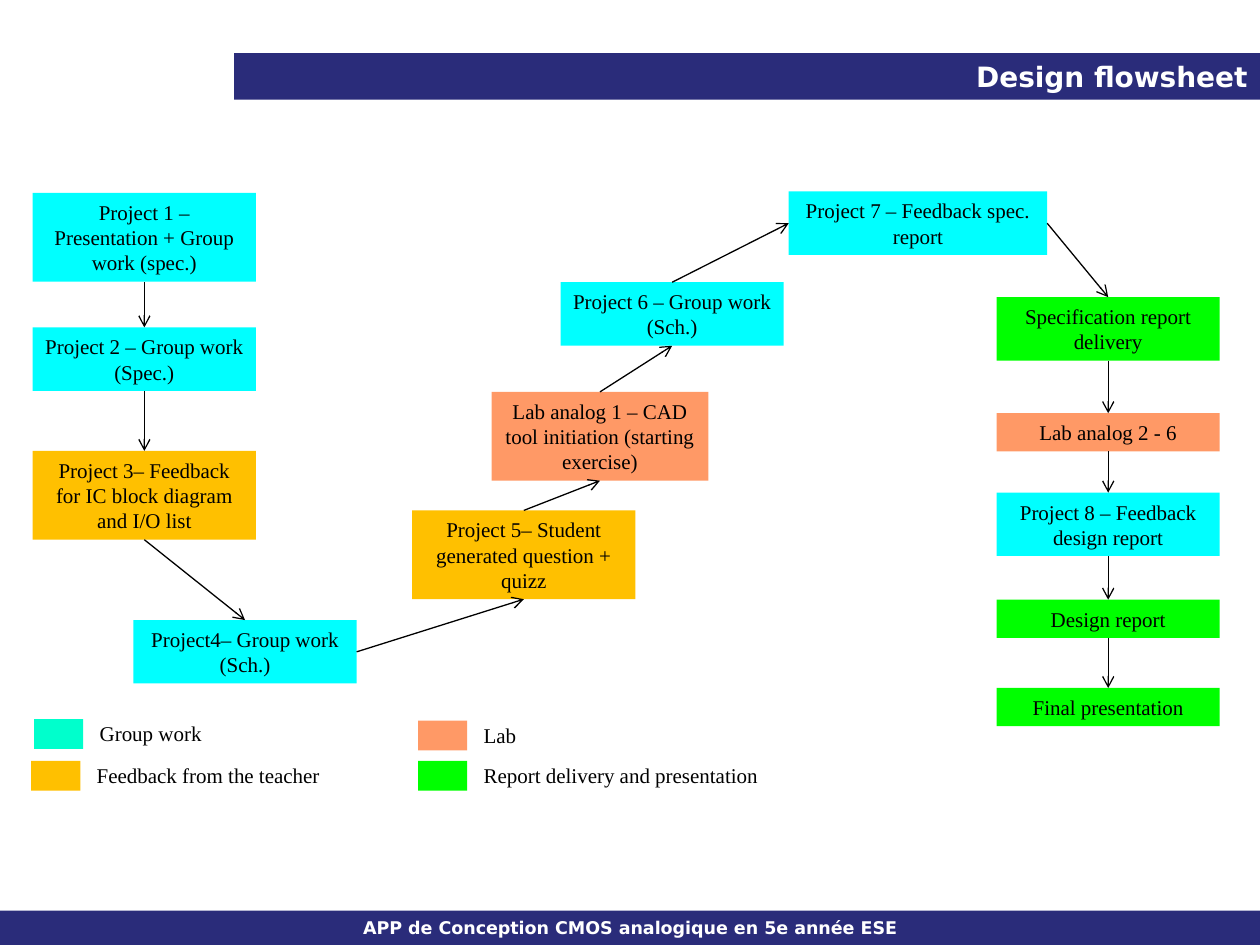
from itertools import pairwise

from lxml import etree
from pptx import Presentation
from pptx.dml.color import RGBColor
from pptx.enum.shapes import MSO_CONNECTOR, MSO_SHAPE
from pptx.enum.text import MSO_ANCHOR as Anchor, PP_ALIGN as Align
from pptx.oxml.ns import qn
from pptx.util import Cm, Pt

NAVY, WHITE, BLACK = "2A2C7A", "FFFFFF", "000000"
CYAN, ORANGE, SALMON, GREEN, MINT = "00FFFF", "FFC000", "FF9966", "00FF00", "00FFCC"
TOP, LEFT, BOTTOM, RIGHT = range(4)  # connection sites of a rectangle


def color(hex_code):
    return RGBColor.from_string(hex_code)


def write(shape, text, size=12, font="Times New Roman", ink=BLACK, bold=False,
          align=Align.CENTER):
    frame = shape.text_frame
    frame.word_wrap = True
    frame.vertical_anchor = Anchor.MIDDLE
    para = frame.paragraphs[0]
    para.alignment = align
    span = para.add_run()
    span.text = text
    span.font.size = Pt(size)
    span.font.name = font
    span.font.bold = bold
    span.font.color.rgb = color(ink)


class FlowSlide:
    step_width = 4.5
    swatch_size = (0.99, 0.6)

    def __init__(self, page):
        self.shapes = page.shapes

    def block(self, x, y, width, height, fill):
        box = self.shapes.add_shape(MSO_SHAPE.RECTANGLE, Cm(x), Cm(y), Cm(width), Cm(height))
        box.shadow.inherit = False
        box.fill.solid()
        box.fill.fore_color.rgb = color(fill)
        box.line.fill.background()
        return box

    def banner(self, x, y, width, height, text, size, align):
        box = self.block(x, y, width, height, NAVY)
        write(box, text, size=size, font="DejaVu Sans", ink=WHITE, bold=True, align=align)

    def step(self, text, x, y, lines, fill, width=step_width):
        box = self.block(x, y, width, 0.26 + 0.51 * lines, fill)
        write(box, text)
        return box

    def arrow(self, start, start_site, end, end_site):
        link = self.shapes.add_connector(MSO_CONNECTOR.STRAIGHT, 0, 0, 0, 0)
        link.begin_connect(start, start_site)
        link.end_connect(end, end_site)
        link.line.width = Pt(0.75)
        link.line.color.rgb = color(BLACK)
        outline = link.line._get_or_add_ln()
        etree.SubElement(outline, qn("a:tailEnd"), type="arrow")
        etree.SubElement(link._element.spPr, qn("a:effectLst"))

    def legend(self, text, x, y, fill, width):
        self.block(x, y, *self.swatch_size, fill)
        label = self.shapes.add_textbox(Cm(x + 1.07), Cm(y - 0.1), Cm(width), Cm(0.77))
        write(label, text, align=Align.LEFT)


def main():
    deck = Presentation()
    deck.slide_width, deck.slide_height = Cm(25.4), Cm(19.05)
    slide = FlowSlide(deck.slides.add_slide(deck.slide_layouts[6]))

    # Footer and title
    slide.banner(0, 18.36, 25.4, 0.69,
                 "APP de Conception CMOS analogique en 5e année ESE", 10, Align.CENTER)
    slide.banner(4.72, 1.07, 20.68, 0.94, "Design flowsheet", 16, Align.RIGHT)

    # Steps in order of the flow
    first_x, last_x = 0.66, 20.09
    steps = [
        slide.step("Project 1 – Presentation + Group work (spec.)", first_x, 3.89, 3, CYAN),
        slide.step("Project 2 – Group work (Spec.)", first_x, 6.6, 2, CYAN),
        slide.step("Project 3– Feedback for IC block diagram and I/O list",
                   first_x, 9.09, 3, ORANGE),
        slide.step("Project4– Group work (Sch.)", 2.69, 12.5, 2, CYAN),
        slide.step("Project 5– Student generated question + quizz", 8.31, 10.29, 3, ORANGE),
        slide.step("Lab analog 1 – CAD tool initiation (starting exercise)",
                   9.91, 7.9, 3, SALMON, width=4.37),
        slide.step("Project 6 – Group work (Sch.)", 11.3, 5.69, 2, CYAN),
        slide.step("Project 7 – Feedback spec. report", 15.9, 3.86, 2, CYAN, width=5.21),
        slide.step("Specification report delivery", last_x, 5.99, 2, GREEN),
        slide.step("Lab analog 2 - 6", last_x, 8.33, 1, SALMON),
        slide.step("Project 8 – Feedback design report", last_x, 9.93, 2, CYAN),
        slide.step("Design report", last_x, 12.09, 1, GREEN),
        slide.step("Final presentation", last_x, 13.87, 1, GREEN),
    ]

    # Arrows between neighbours: down, then up the middle, then down again
    down, up = (BOTTOM, TOP), (TOP, BOTTOM)
    sites = [down] * 3 + [(RIGHT, BOTTOM), up, up, (TOP, LEFT), (RIGHT, TOP)] + [down] * 4
    for (start, end), (start_site, end_site) in zip(pairwise(steps), sites):
        slide.arrow(start, start_site, end, end_site)

    # Legend
    slide.legend("Group work", 0.69, 14.5, MINT, 3.6)
    slide.legend("Feedback from the teacher", 0.63, 15.34, ORANGE, 5.8)
    slide.legend("Lab", 8.43, 14.53, SALMON, 3.6)
    slide.legend("Report delivery and presentation", 8.43, 15.34, GREEN, 7.16)

    deck.save("out.pptx")


if __name__ == "__main__":
    main()
